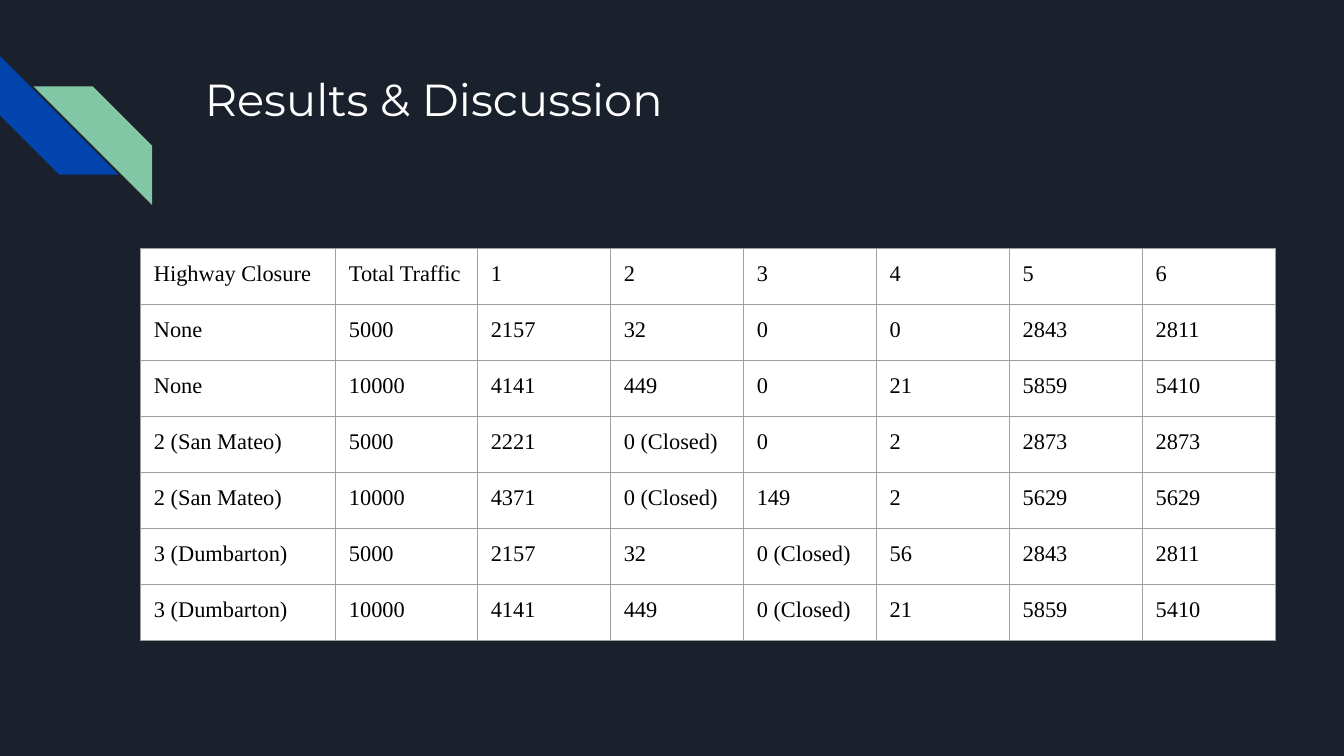
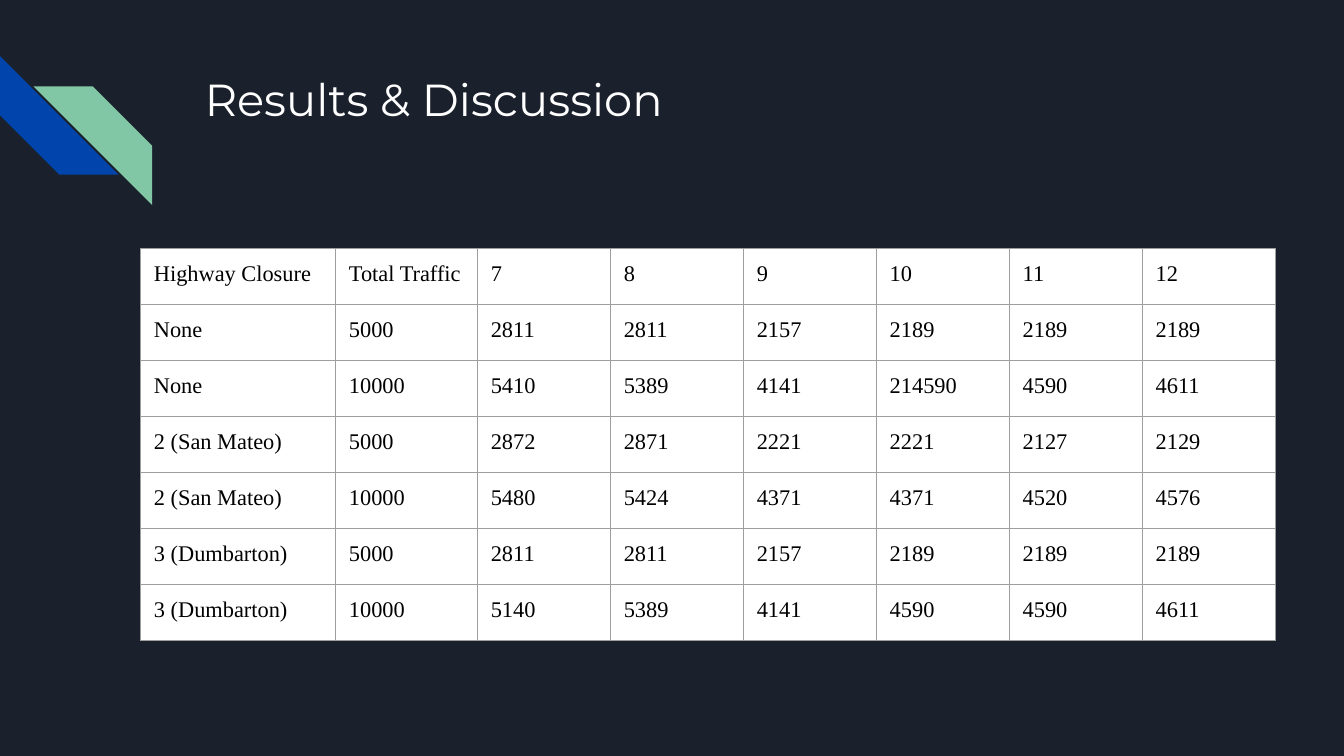
from lxml import etree
from pptx import Presentation
from pptx.dml.color import RGBColor
from pptx.enum.shapes import MSO_SHAPE
from pptx.enum.text import MSO_ANCHOR, MSO_AUTO_SIZE, PP_ALIGN
from pptx.oxml.ns import qn
from pptx.util import Pt

STRIPE = MSO_SHAPE.DIAGONAL_STRIPE
TOP = MSO_ANCHOR.TOP
LEFT = PP_ALIGN.LEFT
NO_AUTOFIT = MSO_AUTO_SIZE.NONE
TITLE_ONLY_LAYOUT = 5

COLORS = {
    "background": "1B212C",
    "blue": "0145AC",
    "green": "82C7A5",
    "white": "FFFFFF",
    "black": "000000",
    "border": "9E9E9E",
}
TITLE_FONT = "Montserrat"
TABLE_FONT = "Times New Roman"
INSET = 7.2
STRIPE_SIZE = 63.5
ROW_HEIGHT = 30
COLUMN_WIDTHS = [104.5, 76] + [71.25] * 6
BORDER_WIDTH = 0.75

SCENARIOS = [
    (closure, traffic)
    for closure in ("None", "2 (San Mateo)", "3 (Dumbarton)")
    for traffic in (5000, 10000)
]
FIRST_SEGMENTS = [
    (2157, 32, 0, 0, 2843, 2811),
    (4141, 449, 0, 21, 5859, 5410),
    (2221, "0 (Closed)", 0, 2, 2873, 2873),
    (4371, "0 (Closed)", 149, 2, 5629, 5629),
    (2157, 32, "0 (Closed)", 56, 2843, 2811),
    (4141, 449, "0 (Closed)", 21, 5859, 5410),
]
LAST_SEGMENTS = [
    (2811, 2811, 2157, 2189, 2189, 2189),
    (5410, 5389, 4141, 214590, 4590, 4611),
    (2872, 2871, 2221, 2221, 2127, 2129),
    (5480, 5424, 4371, 4371, 4520, 4576),
    (2811, 2811, 2157, 2189, 2189, 2189),
    (5140, 5389, 4141, 4590, 4590, 4611),
]


def color(name):
    return RGBColor.from_string(COLORS[name])


class Deck:
    def __init__(self):
        self.presentation = Presentation()
        self.presentation.slide_width = Pt(720)
        self.presentation.slide_height = Pt(405)
        self.slide = None

    def add_slide(self, title):
        layout = self.presentation.slide_layouts[TITLE_ONLY_LAYOUT]
        self.slide = self.presentation.slides.add_slide(layout)
        fill = self.slide.background.fill
        fill.solid()
        fill.fore_color.rgb = color("background")
        self.add_stripe(0, 30, "blue", rotation=270)
        self.add_stripe(18, 46.25, "green", flipped=True)
        self.set_title(title)

    def add_stripe(self, left, top, fill_name, rotation=0, flipped=False):
        shape = self.slide.shapes.add_shape(
            STRIPE, Pt(left), Pt(top), Pt(STRIPE_SIZE), Pt(STRIPE_SIZE)
        )
        shape.adjustments[0] = 0.5
        shape.rotation = rotation
        shape.shadow.inherit = False
        shape.fill.solid()
        shape.fill.fore_color.rgb = color(fill_name)
        shape.line.fill.background()
        if flipped:
            shape.element.spPr.find(qn("a:xfrm")).set("flipH", "1")

    def set_title(self, text):
        title = self.slide.shapes.title
        title.left, title.top = Pt(102.5), Pt(31)
        title.width, title.height = Pt(554.5), Pt(72)
        frame = title.text_frame
        frame.text = text
        frame.word_wrap = True
        frame.auto_size = NO_AUTOFIT
        frame.vertical_anchor = TOP
        self.set_margins(frame)
        self.style_paragraph(frame.paragraphs[0], TITLE_FONT, 24, "white")

    def add_table(self, rows):
        table = self.slide.shapes.add_table(
            len(rows), len(COLUMN_WIDTHS), Pt(75.25), Pt(133),
            Pt(sum(COLUMN_WIDTHS)), Pt(ROW_HEIGHT * len(rows)),
        ).table
        table.first_row = False
        table.horz_banding = False
        for column, width in zip(table.columns, COLUMN_WIDTHS):
            column.width = Pt(width)
        for table_row, values in zip(table.rows, rows):
            table_row.height = Pt(ROW_HEIGHT)
            for cell, value in zip(table_row.cells, values):
                self.fill_cell(cell, str(value))

    def fill_cell(self, cell, text):
        cell.text = text
        self.set_margins(cell)
        cell.vertical_anchor = TOP
        self.style_paragraph(
            cell.text_frame.paragraphs[0], TABLE_FONT, 12, "black"
        )
        properties = cell._tc.get_or_add_tcPr()
        for side in ("a:lnL", "a:lnR", "a:lnT", "a:lnB"):
            line = etree.SubElement(properties, qn(side), w=str(Pt(BORDER_WIDTH)))
            solid = etree.SubElement(line, qn("a:solidFill"))
            etree.SubElement(solid, qn("a:srgbClr"), val=COLORS["border"])
        cell.fill.solid()
        cell.fill.fore_color.rgb = color("white")

    def set_margins(self, box):
        box.margin_left = box.margin_right = Pt(INSET)
        box.margin_top = box.margin_bottom = Pt(INSET)

    def style_paragraph(self, paragraph, font_name, size, color_name):
        paragraph.alignment = LEFT
        paragraph.font.name = font_name
        paragraph.font.size = Pt(size)
        paragraph.font.color.rgb = color(color_name)


def main():
    deck = Deck()
    for first, results in ((1, FIRST_SEGMENTS), (7, LAST_SEGMENTS)):
        header = ("Highway Closure", "Total Traffic", *range(first, first + 6))
        body = [
            scenario + counts for scenario, counts in zip(SCENARIOS, results)
        ]
        deck.add_slide("Results & Discussion")
        deck.add_table([header] + body)
    deck.presentation.save("out.pptx")


if __name__ == "__main__":
    main()
